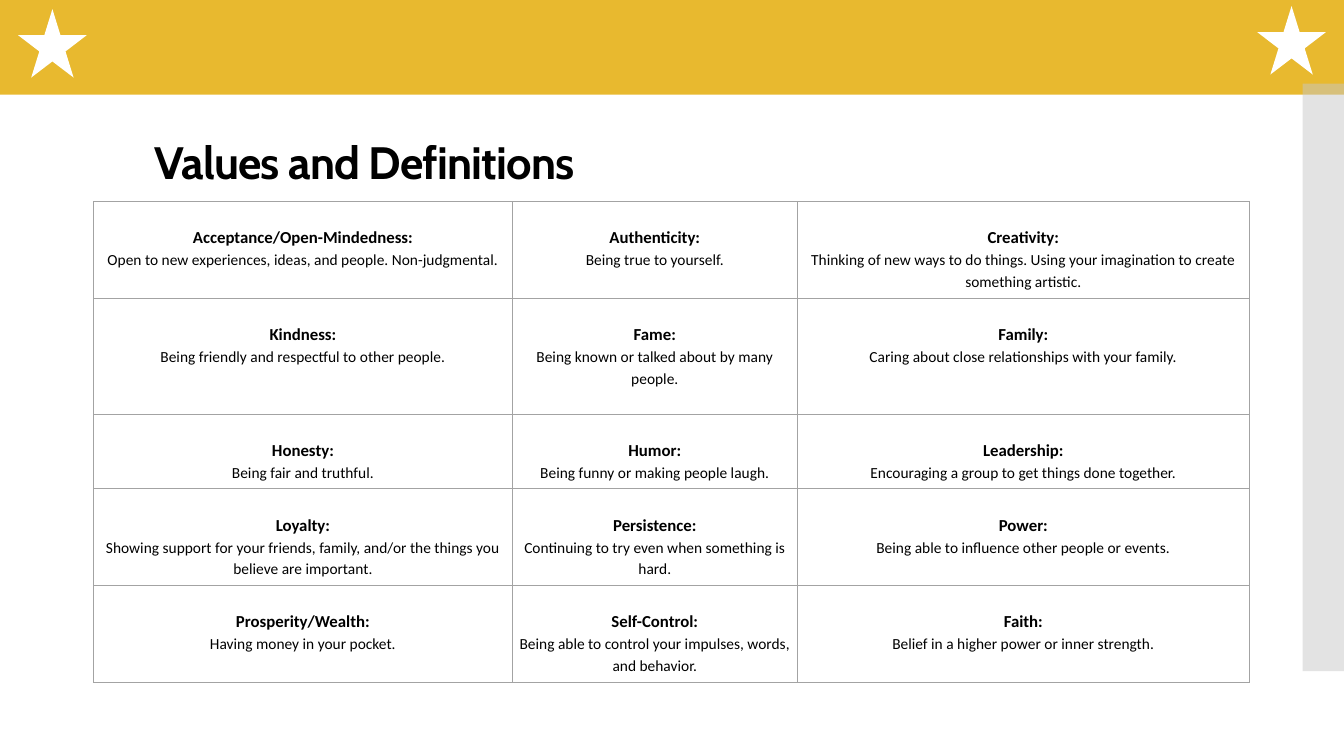
from lxml import etree
from pptx import Presentation
from pptx.dml.color import RGBColor
from pptx.enum.shapes import MSO_SHAPE
from pptx.enum.text import MSO_ANCHOR, MSO_AUTO_SIZE, PP_ALIGN
from pptx.oxml.ns import qn
from pptx.util import Inches, Pt

RECT = MSO_SHAPE.RECTANGLE
STAR = MSO_SHAPE.STAR_5_POINT
LEFT, CENTER = PP_ALIGN.LEFT, PP_ALIGN.CENTER
MIDDLE, FIXED = MSO_ANCHOR.MIDDLE, MSO_AUTO_SIZE.NONE

GOLD, WHITE, GRAY, BLACK, RULE = "E8B92F", "FFFFFF", "C8C8C8", "000000", "A3A3A3"
COLS = [4.15, 2.83, 4.48]
ROWS = [0.96, 1.15, 0.74, 0.96, 0.96]
VALUES = [
    [("Acceptance/Open-Mindedness:",
      "Open to new experiences, ideas, and people. Non-judgmental."),
     ("Authenticity:", "Being true to yourself."),
     ("Creativity:",
      "Thinking of new ways to do things. Using your imagination to create something artistic.")],
    [("Kindness:", "Being friendly and respectful to other people."),
     ("Fame:", "Being known or talked about by many people."),
     ("Family:", "Caring about close relationships with your family.")],
    [("Honesty:", "Being fair and truthful."),
     ("Humor:", "Being funny or making people laugh."),
     ("Leadership:", "Encouraging a group to get things done together.")],
    [("Loyalty:",
      "Showing support for your friends, family, and/or the things you believe are important."),
     ("Persistence:", "Continuing to try even when something is hard."),
     ("Power:", "Being able to influence other people or events.")],
    [("Prosperity/Wealth:", "Having money in your pocket."),
     ("Self-Control:", "Being able to control your impulses, words, and behavior."),
     ("Faith:", "Belief in a higher power or inner strength.")],
]


def color(code):
    """Turn a hex string into a colour."""
    return RGBColor.from_string(code)


def style(par, face, size, bold, align):
    """Set the font and alignment of a paragraph."""
    par.alignment = align
    par.font.name = face
    par.font.size = Pt(size)
    par.font.bold = bold
    par.font.color.rgb = color(BLACK)


def block(slide, kind, left, top, width, height, fill, alpha=100):
    """Add a plain filled shape, with its opacity in percent."""
    shape = slide.shapes.add_shape(
        kind, Inches(left), Inches(top), Inches(width), Inches(height))
    shape.shadow.inherit = False
    shape.fill.solid()
    shape.fill.fore_color.rgb = color(fill)
    shape.line.fill.background()
    if alpha < 100:
        tint = shape.fill._xPr.find(".//" + qn("a:srgbClr"))
        etree.SubElement(tint, qn("a:alpha"), val=str(alpha * 1000))


def banner(slide, left, top, width, height):
    """Add the gold band with a star near each end."""
    block(slide, RECT, left, top, width, height, GOLD)
    size = 0.68
    block(slide, STAR, left + 0.18, top + 0.17, size, size, WHITE)
    block(slide, STAR, left + width - size - 0.32, top + 0.14, size, size, WHITE)


def heading(slide, left, top, width, height):
    """Place and format the title."""
    title = slide.shapes.title
    title.left, title.top = Inches(left), Inches(top)
    title.width, title.height = Inches(width), Inches(height)
    frame = title.text_frame
    frame.text = "Values and Definitions"
    frame.auto_size = FIXED
    frame.vertical_anchor = MIDDLE
    par = frame.paragraphs[0]
    style(par, "Cabin", 32.4, True, LEFT)
    par.line_spacing = 0.9
    par.runs[0]._r.get_or_add_rPr().set("spc", "-60")


def border(cell):
    """Draw a thin line on each side of a cell."""
    props = cell._tc.get_or_add_tcPr()
    for spot, side in enumerate(("a:lnL", "a:lnR", "a:lnT", "a:lnB")):
        line = etree.Element(qn(side), w=str(Pt(1)))
        fill = etree.SubElement(line, qn("a:solidFill"))
        etree.SubElement(fill, qn("a:srgbClr"), val=RULE)
        props.insert(spot, line)


def entry(cell, name, text):
    """Fill a cell with a value and its definition."""
    cell.fill.background()
    border(cell)
    cell.margin_left = cell.margin_right = Inches(0.04)
    cell.margin_top, cell.margin_bottom = Inches(0.23), Inches(0.03)
    frame = cell.text_frame
    frame.text = f"{name}\n{text}"
    for par, size, bold in zip(frame.paragraphs, (12, 11), (True, False)):
        style(par, "Calibri", size, bold, CENTER)
        par.line_spacing = 1.15


def grid(slide, left, top):
    """Add the table of values."""
    frame = slide.shapes.add_table(
        len(ROWS), len(COLS), Inches(left), Inches(top),
        Inches(sum(COLS)), Inches(sum(ROWS)))
    table = frame.table
    table.first_row = table.horz_banding = False
    for col, width in zip(table.columns, COLS):
        col.width = Inches(width)
    for row, height, items in zip(table.rows, ROWS, VALUES):
        row.height = Inches(height)
        for cell, item in zip(row.cells, items):
            entry(cell, *item)


def main():
    """Build and save the slide."""
    deck = Presentation()
    deck.slide_width, deck.slide_height = Inches(13.33), Inches(7.5)
    slide = deck.slides.add_slide(deck.slide_layouts[5])
    banner(slide, 0, -0.08, 13.47, 1.02)
    block(slide, RECT, 12.92, 0.83, 0.42, 5.83, GRAY, 50)
    heading(slide, 1.43, 1.32, 7.16, 0.62)
    grid(slide, 0.93, 2)
    deck.save("out.pptx")


if __name__ == "__main__":
    main()
